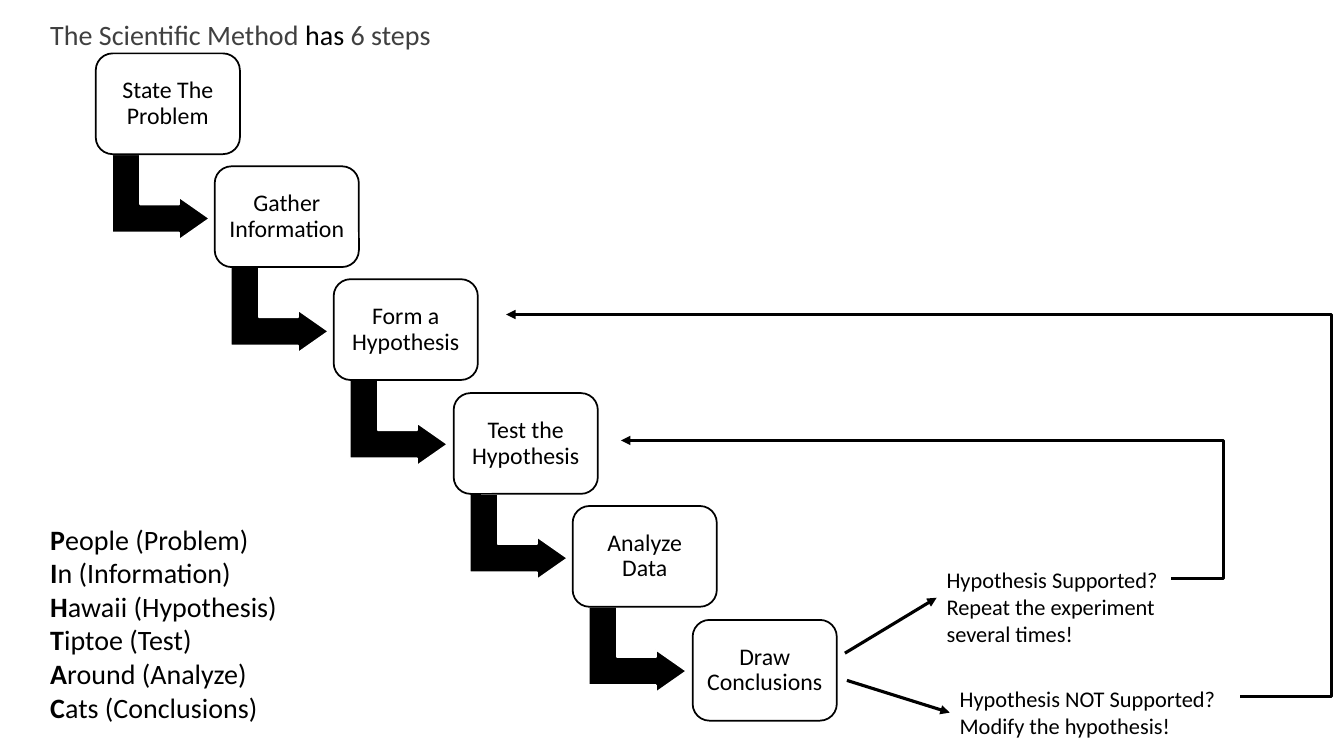
from lxml import etree
from pptx import Presentation
from pptx.dml.color import RGBColor
from pptx.enum.shapes import MSO_CONNECTOR as CONN, MSO_SHAPE as SHAPE
from pptx.enum.text import MSO_ANCHOR as ANCHOR, PP_ALIGN as ALIGN
from pptx.oxml.ns import qn
from pptx.util import Emu, Pt

BLACK, WHITE, GRAY = "000000", "FFFFFF", "404040"
STEPS = ["State The Problem", "Gather Information", "Form a Hypothesis",
         "Test the Hypothesis", "Analyze Data", "Draw Conclusions"]
MNEMONIC = ["People (Problem)", "In (Information)", "Hawaii (Hypothesis)",
            "Tiptoe (Test)", "Around (Analyze)", "Cats (Conclusions)"]


def px(n):
    """Convert px to EMU at 100 px to the inch."""
    return Emu(n * 9144)


def rgb(color):
    return RGBColor.from_string(color)


def add_run(p, text, size, color=BLACK, bold=False):
    r = p.add_run()
    r.text = text
    r.font.name = "Calibri"
    r.font.size = Pt(size)
    r.font.bold = bold
    r.font.color.rgb = rgb(color)


def add_textbox(slide, x, y, w, h):
    sp = slide.shapes.add_textbox(px(x), px(y), px(w), px(h))
    sp.text_frame.word_wrap = True
    return sp


def add_shape(slide, kind, box, adjustments, line):
    sp = slide.shapes.add_shape(kind, *map(px, box))
    sp.shadow.inherit = False
    for i, value in enumerate(adjustments):
        sp.adjustments[i] = value
    sp.line.color.rgb = rgb(line)
    sp.line.width = Pt(1.25)
    return sp


def add_arrow(slide, kind, start, end):
    c = slide.shapes.add_connector(kind, *map(px, start + end))
    c.line.color.rgb = rgb(BLACK)
    c.line.width = Pt(2.25)
    etree.SubElement(c.line._get_or_add_ln(), qn("a:tailEnd"), type="triangle")
    etree.SubElement(c._element.spPr, qn("a:effectLst"))
    return c


def add_loop_back(slide, start, end, turn_x):
    """Draw an elbow arrow that turns at turn_x, beyond its start."""
    c = add_arrow(slide, CONN.ELBOW, start, end)
    ratio = (turn_x - start[0]) / (end[0] - start[0])
    guides = c._element.spPr.find(qn("a:prstGeom")).find(qn("a:avLst"))
    etree.SubElement(guides, qn("a:gd"), name="adj1",
                     fmla=f"val {round(ratio * 100000)}")


def add_title(slide, x, y, w, h):
    tf = add_textbox(slide, x, y, w, h).text_frame
    p = tf.paragraphs[0]
    p.line_spacing = 0.9
    add_run(p, "The Scientific Method ", 20, GRAY)
    add_run(p, "has", 20)
    add_run(p, " 6 steps", 20, GRAY)


def add_step(slide, x, y, w, h, text):
    sp = add_shape(slide, SHAPE.ROUNDED_RECTANGLE, (x, y, w, h), [0.167], BLACK)
    sp.fill.background()
    tf = sp.text_frame
    tf.word_wrap = True
    tf.vertical_anchor = ANCHOR.MIDDLE
    tf.margin_left = tf.margin_right = tf.margin_top = tf.margin_bottom = px(7)
    p = tf.paragraphs[0]
    p.alignment = ALIGN.CENTER
    p.line_spacing = 0.9
    add_run(p, text, 17)


def add_staircase(slide, x, y, w, h):
    """Spread the steps down the box diagonal, with a bent arrow between each."""
    step_w, step_h = 143, 100
    last = len(STEPS) - 1
    for i, text in enumerate(STEPS):
        left = x + (w - step_w) * i // last
        top = y + (h - step_h) * i // last
        if i < last:
            bend = add_shape(slide, SHAPE.BENT_UP_ARROW,
                             (left + 22, top + 94, 85, 97),
                             [0.328, 0.25, 0.358], WHITE)
            bend.rotation = 90
            bend.fill.solid()
            bend.fill.fore_color.rgb = rgb(BLACK)
        add_step(slide, left, top, step_w, step_h, text)


def add_outcome(slide, x, y, w, h, text):
    sp = add_textbox(slide, x, y, w, h)
    add_run(sp.text_frame.paragraphs[0], text, 16)
    return sp


def add_outcomes(slide, x, y):
    """Place both outcomes, the arrows to them and the loops back to the steps."""
    add_outcome(slide, x, y, 284, 91,
                "Hypothesis Supported? Repeat the experiment several times!")
    rejected = add_outcome(slide, x + 13, y + 118, 284, 64,
                           "Hypothesis NOT Supported? Modify the hypothesis!")
    add_arrow(slide, CONN.STRAIGHT, (x - 91, y + 91), (x, y + 36))
    c = add_arrow(slide, CONN.STRAIGHT, (x - 89, y + 118), (x + 13, y + 150))
    c.end_connect(rejected, 1)
    add_loop_back(slide, (x + 233, y + 17), (x - 313, y - 120), x + 285)
    add_loop_back(slide, (x + 301, y + 134), (x - 427, y - 245), x + 391)


def add_mnemonic(slide, x, y, w, h):
    tf = add_textbox(slide, x, y, w, h).text_frame
    for i, line in enumerate(MNEMONIC):
        p = tf.add_paragraph() if i else tf.paragraphs[0]
        add_run(p, line[0], 20, bold=True)
        add_run(p, line[1:], 20)


def main():
    prs = Presentation()
    prs.slide_width, prs.slide_height = px(1333), px(750)
    slide = prs.slides.add_slide(prs.slide_layouts[6])
    add_title(slide, 40, 16, 1100, 440)
    add_staircase(slide, 95, 53, 735, 662)
    add_outcomes(slide, 929, 557)
    add_mnemonic(slide, 40, 513, 296, 212)
    prs.save("out.pptx")


if __name__ == "__main__":
    main()
